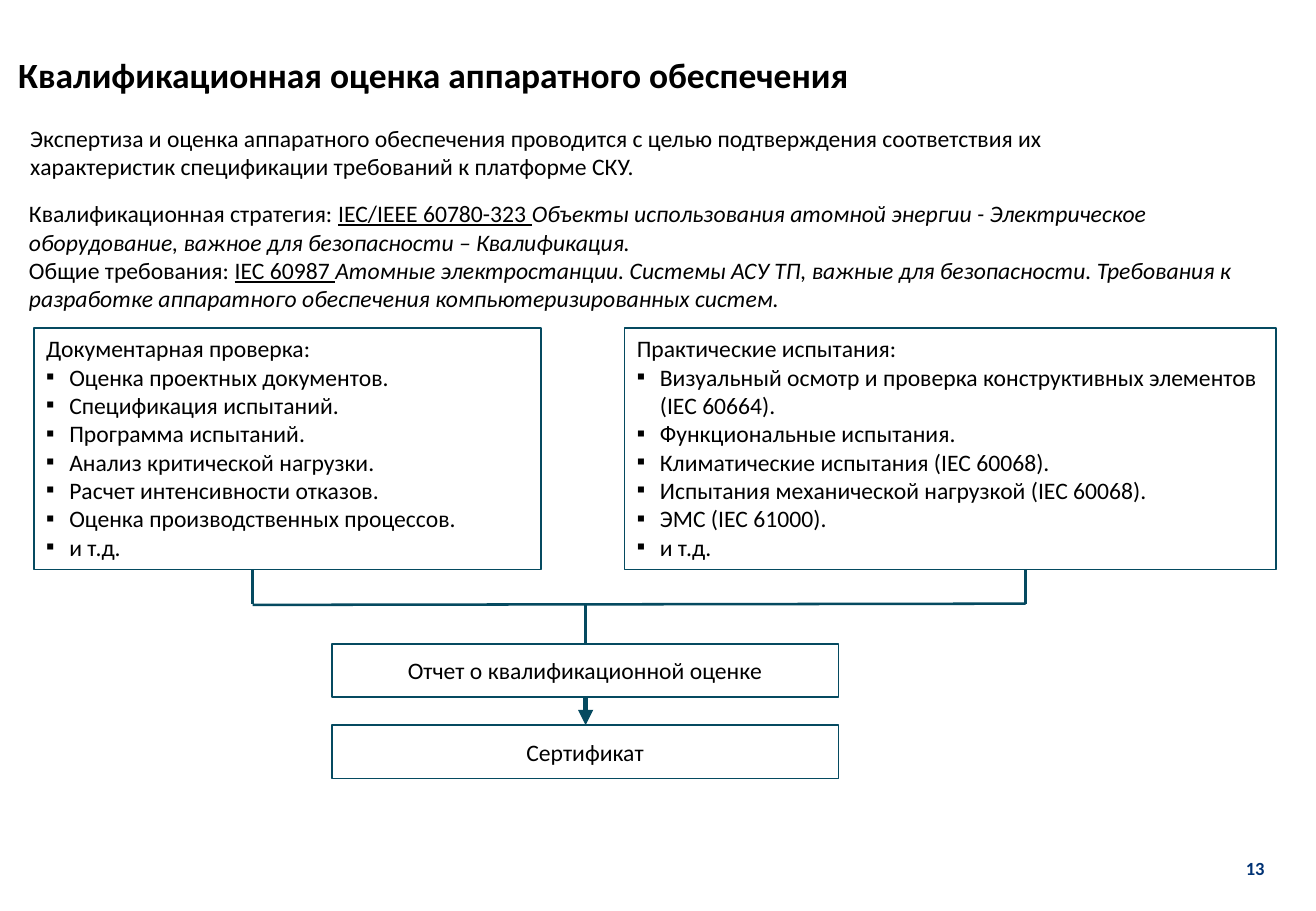
from dataclasses import dataclass

from lxml import etree
from pptx import Presentation
from pptx.dml.color import RGBColor
from pptx.enum.shapes import MSO_CONNECTOR, MSO_SHAPE
from pptx.enum.text import MSO_ANCHOR, MSO_AUTO_SIZE, PP_ALIGN
from pptx.oxml.ns import qn
from pptx.util import Inches, Pt

BLACK = RGBColor(0x00, 0x00, 0x00)
NAVY = RGBColor(0x00, 0x32, 0x74)
TEAL = RGBColor(0x05, 0x4A, 0x60)
RECT, STRAIGHT = MSO_SHAPE.RECTANGLE, MSO_CONNECTOR.STRAIGHT
TOP, MIDDLE = MSO_ANCHOR.TOP, MSO_ANCHOR.MIDDLE
LEFT, CENTER = PP_ALIGN.LEFT, PP_ALIGN.CENTER
FIXED = MSO_AUTO_SIZE.NONE

BASE = {"name": "Calibri", "size": Pt(14), "bold": False}
HEAD = {"size": Pt(21), "bold": True}
PAGE = {"size": Pt(11), "bold": True}
UNDER = {"underline": True}
ITALIC = {"italic": True}


@dataclass
class Panel:
    slot: int
    left: float
    width: float
    head: str
    items: list[str]


@dataclass
class Step:
    top: float
    text: str


@dataclass
class Link:
    start: tuple[float, float]
    end: tuple[float, float]
    weight: float = 1.5
    arrow: bool = False


PANELS = [
    Panel(1, 0.28, 4.17, "Документарная проверка:", [
        "Оценка проектных документов.",
        "Спецификация испытаний.",
        "Программа испытаний.",
        "Анализ критической нагрузки.",
        "Расчет интенсивности отказов.",
        "Оценка производственных процессов.",
        "и т.д.",
    ]),
    Panel(2, 5.14, 5.36, "Практические испытания:", [
        "Визуальный осмотр и проверка конструктивных элементов (IEC 60664).",
        "Функциональные испытания.",
        "Климатические испытания (IEC 60068).",
        "Испытания механической нагрузкой (IEC 60068).",
        "ЭМС (IEC 61000).",
        "и т.д.",
    ]),
]
STEPS = [Step(5.3, "Отчет о квалификационной оценке"), Step(5.97, "Сертификат")]
LINKS = [
    Link((2.08, 4.98), (8.44, 4.97)),
    Link((2.08, 4.97), (2.08, 4.69)),
    Link((8.44, 4.97), (8.44, 4.69)),
    Link((4.82, 4.98), (4.82, 5.3)),
    Link((4.82, 5.73), (4.82, 5.97), 3, True),
]
INTRO = [[("Экспертиза и оценка аппаратного обеспечения проводится с целью "
           "подтверждения соответствия их характеристик спецификации "
           "требований к платформе СКУ.", {})]]
NORMS = [
    [("Квалификационная стратегия: ", {}),
     ("IEC/IEEE 60780-323 ", UNDER),
     ("Объекты использования атомной энергии - Электрическое оборудование, "
      "важное для безопасности – Квалификация.", ITALIC)],
    [("Общие требования: ", {}),
     ("IEC 60987 ", UNDER),
     ("Атомные электростанции. Системы АСУ ТП, важные для безопасности. "
      "Требования к разработке аппаратного обеспечения "
      "компьютеризированных систем.", ITALIC)],
]


def place(shape, left: float, top: float, width: float, height: float) -> None:
    shape.left, shape.top = Inches(left), Inches(top)
    shape.width, shape.height = Inches(width), Inches(height)


def write(frame, paras: list, align=LEFT, anchor=TOP, color=BLACK,
          wrap: bool = True) -> None:
    frame.auto_size = FIXED
    frame.word_wrap = wrap
    frame.vertical_anchor = anchor
    for i, runs in enumerate(paras):
        para = frame.paragraphs[0] if i == 0 else frame.add_paragraph()
        para.alignment = align
        para.space_before = Pt(0)
        for text, style in runs:
            run = para.add_run()
            run.text = text
            for key, value in (BASE | style).items():
                setattr(run.font, key, value)
            run.font.color.rgb = color


def mark(para, char: str = "") -> None:
    props = para._p.get_or_add_pPr()
    dent = Inches(0.19) if char else 0
    props.set("marL", str(dent))
    props.set("indent", str(-dent))
    if char:
        etree.SubElement(props, qn("a:buFont"), typeface="Calibri")
        etree.SubElement(props, qn("a:buChar"), char=char)
    else:
        etree.SubElement(props, qn("a:buNone"))


def frame_box(shape) -> None:
    shape.fill.background()
    shape.line.color.rgb = TEAL
    shape.line.width = Pt(1)


def add_note(slide, box: tuple, paras: list, **style) -> None:
    note = slide.shapes.add_textbox(*(Inches(n) for n in box))
    write(note.text_frame, paras, **style)


def add_panel(slide, panel: Panel) -> None:
    shape = slide.placeholders[panel.slot]
    place(shape, panel.left, 2.7, panel.width, 1.99)
    frame_box(shape)
    write(shape.text_frame, [[(line, {})] for line in [panel.head, *panel.items]])
    for i, para in enumerate(shape.text_frame.paragraphs):
        mark(para, "▪" if i else "")


def add_step(slide, step: Step) -> None:
    box = (2.73, step.top, 4.17, 0.44)
    shape = slide.shapes.add_shape(RECT, *(Inches(n) for n in box))
    shape.shadow.inherit = False
    frame_box(shape)
    write(shape.text_frame, [[(step.text, {})]], CENTER, MIDDLE)


def add_link(slide, link: Link) -> None:
    ends = (Inches(n) for n in (*link.start, *link.end))
    line = slide.shapes.add_connector(STRAIGHT, *ends)
    line.line.color.rgb = TEAL
    line.line.width = Pt(link.weight)
    if link.arrow:
        etree.SubElement(line.line._get_or_add_ln(), qn("a:tailEnd"), type="triangle")
    etree.SubElement(line._element.spPr, qn("a:effectLst"))


def main() -> None:
    deck = Presentation()
    deck.slide_width, deck.slide_height = Inches(10.83), Inches(7.5)
    slide = deck.slides.add_slide(deck.slide_layouts[3])

    # Title
    title = slide.shapes.title
    place(title, 0.15, 0.48, 9.65, 0.33)
    frame = title.text_frame
    for side in ("left", "right", "top", "bottom"):
        setattr(frame, f"margin_{side}", 0)
    write(frame, [[("Квалификационная оценка аппаратного обеспечения", HEAD)]])
    frame.paragraphs[0].line_spacing = 0.9

    # Purpose and standards
    add_note(slide, (0.15, 0.97, 9.72, 0.57), INTRO)
    add_note(slide, (0.14, 1.59, 10.42, 1.04), NORMS)

    # Flow from checks to certificate
    for panel in PANELS:
        add_panel(slide, panel)
    for step in STEPS:
        add_step(slide, step)
    for link in LINKS:
        add_link(slide, link)

    # Page number
    add_note(slide, (10.11, 6.86, 0.44, 0.58), [[("13", PAGE)]],
             align=CENTER, anchor=MIDDLE, color=NAVY, wrap=False)
    deck.save("out.pptx")


if __name__ == "__main__":
    main()
